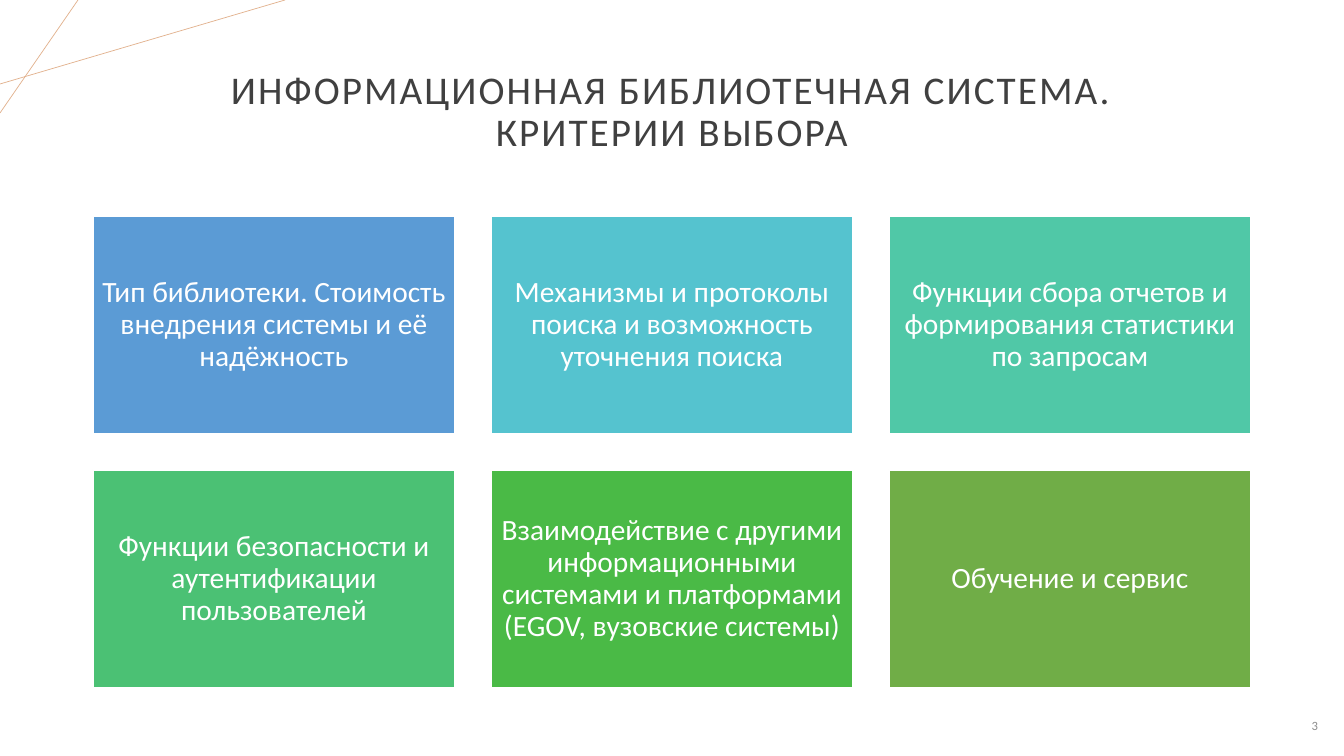
from lxml import etree
from pptx import Presentation
from pptx.dml.color import RGBColor
from pptx.enum.shapes import MSO_CONNECTOR, MSO_SHAPE
from pptx.enum.text import MSO_ANCHOR, PP_ALIGN
from pptx.oxml.ns import qn
from pptx.util import Pt

RECTANGLE = MSO_SHAPE.RECTANGLE
STRAIGHT = MSO_CONNECTOR.STRAIGHT
MIDDLE = MSO_ANCHOR.MIDDLE
CENTER, RIGHT = PP_ALIGN.CENTER, PP_ALIGN.RIGHT

THEME = {
    "font": "Calibri",
    "title": (28, "404040"),
    "criterion": (21, "FFFFFF"),
    "number": (9, "8C8C8C"),
    "border": "FFFFFF",
    "ray": "E2B18D",
}
EMU_PER_PX = 914400 / 100.8


def px(*lengths):
    return [round(length * EMU_PER_PX) for length in lengths]


def write(shape, text, role, align, inset_x=10, inset_y=5, **paragraph_format):
    """Fill a shape with one vertically centred paragraph in a theme style."""
    frame = shape.text_frame
    inset_x, inset_y = px(inset_x, inset_y)
    frame_format = {
        "word_wrap": True, "vertical_anchor": MIDDLE,
        "margin_left": inset_x, "margin_right": inset_x,
        "margin_top": inset_y, "margin_bottom": inset_y,
    }
    for name, value in frame_format.items():
        setattr(frame, name, value)
    paragraph = frame.paragraphs[0]
    paragraph.text = text
    for name, value in {"alignment": align, **paragraph_format}.items():
        setattr(paragraph, name, value)
    size, color = THEME[role]
    for run in paragraph.runs:
        run.font.name = THEME["font"]
        run.font.size = Pt(size)
        run.font.color.rgb = RGBColor.from_string(color)
    return paragraph


deck = Presentation()
deck.slide_width, deck.slide_height = px(1344, 756)
slide = deck.slides.add_slide(deck.slide_layouts[6])
shapes = slide.shapes

# Corner rays
for ends in [(0, 84, 285, 0), (78, 0, 0, 113)]:
    ray = shapes.add_connector(STRAIGHT, *px(*ends))
    ray.line.color.rgb = RGBColor.from_string(THEME["ray"])
    ray.line.width = Pt(0.5)
    etree.SubElement(ray._element.spPr, qn("a:effectLst"))

# Title and slide number
title = write(
    shapes.add_textbox(*px(93, 40, 1158, 146)),
    "ИНФОРМАЦИОННАЯ БИБЛИОТЕЧНАЯ СИСТЕМА.\vКРИТЕРИИ ВЫБОРА",
    "title", CENTER, line_spacing=0.9,
)
for run in title.runs:
    run.font._element.set("spc", "150")
write(shapes.add_textbox(*px(1286, 705, 42, 40)), "3", "number", RIGHT)

# Grid of selection criteria
CRITERIA = [
    ("Тип библиотеки. Стоимость внедрения системы и её надёжность", "5B9BD5"),
    ("Механизмы и протоколы поиска и возможность уточнения поиска", "55C3CF"),
    ("Функции сбора отчетов и формирования статистики по запросам", "50C8A7"),
    ("Функции безопасности и аутентификации пользователей", "4BC174"),
    ("Взаимодействие с другими информационными системами и платформами "
     "(EGOV, вузовские системы)", "4ABA46"),
    ("Обучение и сервис", "70AD47"),
]
COLUMNS = 3
GRID_LEFT, GRID_TOP = 93, 216
TILE_WIDTH, TILE_HEIGHT, GAP = 362, 218, 36

for index, (criterion, color) in enumerate(CRITERIA):
    row, column = divmod(index, COLUMNS)
    left = GRID_LEFT + column * (TILE_WIDTH + GAP)
    top = GRID_TOP + row * (TILE_HEIGHT + GAP)
    tile = shapes.add_shape(RECTANGLE, *px(left, top, TILE_WIDTH, TILE_HEIGHT))
    tile.shadow.inherit = False
    tile.fill.solid()
    tile.fill.fore_color.rgb = RGBColor.from_string(color)
    tile.line.color.rgb = RGBColor.from_string(THEME["border"])
    tile.line.width = Pt(1)
    write(tile, criterion, "criterion", CENTER, 9, 9, line_spacing=0.9)

deck.save("out.pptx")
